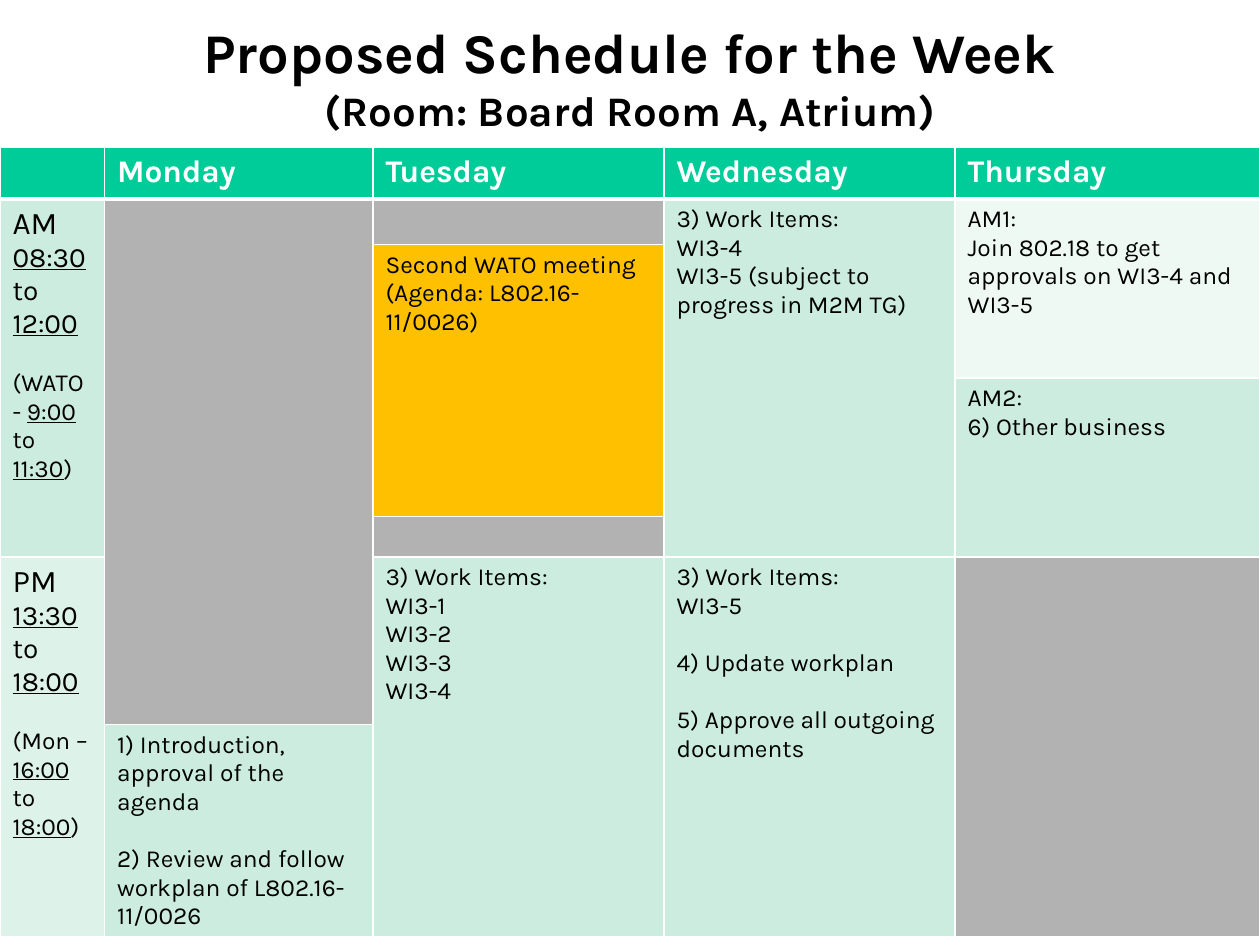
"""Build the weekly schedule slide."""
from dataclasses import dataclass

import pptx
import pptx.dml.color
import pptx.enum.text
import pptx.oxml
import pptx.oxml.ns
import pptx.util
from pptx.util import Inches

FACE = "Karla"
BLACK, WHITE = "000000", "FFFFFF"
GREEN, MINT, PALE, LIGHT = "00CC99", "CBECDE", "DDF3EA", "EEF9F4"
GREY, GOLD = "B2B2B2", "FFC000"
COLS = (0.83, 2.13, 2.31, 2.31, 2.42)
ROWS = (0.41, 0.36, 1.06, 1.1, 0.32, 1.33, 1.68)


@dataclass(frozen=True)
class Para:
    """A paragraph, with underlined parts between underscores."""
    text: str
    size: int = 14
    gap: float = 0
    color: str = BLACK
    bold: bool = False


@dataclass(frozen=True)
class Block:
    """A table cell that may span several rows."""
    row: int
    col: int
    fill: str
    paras: tuple[Para, ...] = ()
    span: int = 1


def lines(*texts: str) -> tuple[Para, ...]:
    """Make plain paragraphs."""
    return tuple(Para(text) for text in texts)


def times(half: str, hours: str, note: str) -> tuple[Para, ...]:
    """Make the text of a time cell."""
    return Para(half, 18), Para(hours, 16), Para(note, gap=16.4)


def heads() -> list[Block]:
    """Make the header row."""
    days = ("", "Monday", "Tuesday", "Wednesday", "Thursday")
    return [Block(0, col, GREEN, (Para(day, 18, color=WHITE, bold=True),) if day else ())
            for col, day in enumerate(days)]


BLOCKS = heads() + [
    Block(1, 0, MINT, times("AM", "_08:30_ to _12:00_", "(WATO - _9:00_ to _11:30_)"), 4),
    Block(5, 0, PALE, times("PM", "_13:30_ to _18:00_", "(Mon – _16:00_ to _18:00_)"), 2),
    Block(1, 1, GREY, span=5),
    Block(6, 1, MINT, (Para("1) Introduction, approval of the agenda"),
                       Para("2) Review and follow workplan of L802.16-11/0026", gap=16.4))),
    Block(1, 2, GREY),
    Block(2, 2, GOLD, lines("Second WATO meeting", "(Agenda: L802.16-11/0026)"), 2),
    Block(4, 2, GREY),
    Block(5, 2, MINT, lines("3) Work Items:", "WI3-1", "WI3-2", "WI3-3", "WI3-4"), 2),
    Block(1, 3, MINT, lines("3) Work Items:", "WI3-4",
                            "WI3-5 (subject to progress in M2M TG)"), 4),
    Block(5, 3, MINT, lines("3) Work Items:", "WI3-5") + (
        Para("4) Update workplan", gap=16.4),
        Para("5) Approve all outgoing documents", gap=16.4)), 2),
    Block(1, 4, LIGHT, lines("AM1:", "Join 802.18 to get approvals on WI3-4 and WI3-5"), 2),
    Block(3, 4, MINT, lines("AM2:", "6) Other business"), 2),
    Block(5, 4, GREY, span=2),
]


def rgb(code: str) -> pptx.dml.color.RGBColor:
    """Turn a hex string into a colour."""
    return pptx.dml.color.RGBColor.from_string(code)


def style(font, color: str, bold: bool) -> None:
    """Set face, colour and weight."""
    font.name, font.bold = FACE, bold
    font.color.rgb = rgb(color)


def edge(cell, row: int) -> None:
    """Draw white borders, thick below the header."""
    props = cell._tc.get_or_add_tcPr()
    space = pptx.oxml.ns.nsdecls("a")
    for side in "LRTB":
        thick = (row, side) in ((0, "B"), (1, "T"))
        width = pptx.util.Pt(3 if thick else 1)
        props.append(pptx.oxml.parse_xml(
            f'<a:ln{side} {space} w="{width}"><a:solidFill>'
            f'<a:srgbClr val="{WHITE}"/></a:solidFill></a:ln{side}>'))


def write(frame, paras: tuple[Para, ...]) -> None:
    """Write paragraphs into a text frame."""
    for num, para in enumerate(paras):
        item = frame.add_paragraph() if num else frame.paragraphs[0]
        style(item.font, para.color, para.bold)
        item.font.size = pptx.util.Pt(para.size)
        if para.gap:
            item.space_before = pptx.util.Pt(para.gap)
        for part, text in enumerate(para.text.split("_")):
            if text:
                run = item.add_run()
                run.text = text
                if part % 2:
                    run.font.underline = True


def draw(table, block: Block) -> None:
    """Fill one block of the table."""
    cell = table.cell(block.row, block.col)
    if block.span > 1:
        cell.merge(table.cell(block.row + block.span - 1, block.col))
    cell.fill.solid()
    cell.fill.fore_color.rgb = rgb(block.fill)
    if block.paras:
        cell.margin_top = cell.margin_bottom = Inches(0.05)
        write(cell.text_frame, block.paras)


def title(slide) -> None:
    """Place and write the title."""
    shape = slide.shapes.title
    shape.left, shape.top = Inches(0.5), Inches(0.05)
    shape.width, shape.height = Inches(9), Inches(0.95)
    frame = shape.text_frame
    frame.auto_size = pptx.enum.text.MSO_AUTO_SIZE.NONE
    frame.vertical_anchor = pptx.enum.text.MSO_ANCHOR.TOP
    frame.margin_top = Inches(0.09)
    para = frame.paragraphs[0]
    para.alignment = pptx.enum.text.PP_ALIGN.CENTER
    style(para.font, BLACK, True)
    for text, size in (("Proposed Schedule for the Week", 32),
                       ("(Room: Board Room A, Atrium)", 24)):
        if para.runs:
            para.add_line_break()
        run = para.add_run()
        run.text = text
        run.font.size = pptx.util.Pt(size)


def grid(slide) -> None:
    """Add the schedule table."""
    table = slide.shapes.add_table(
        len(ROWS), len(COLS), Inches(0), Inches(1.17),
        Inches(sum(COLS)), Inches(sum(ROWS))).table
    table.first_row = table.horz_banding = False
    for col, width in zip(table.columns, COLS):
        col.width = Inches(width)
    for num, (row, height) in enumerate(zip(table.rows, ROWS)):
        row.height = Inches(height)
        for cell in row.cells:
            cell.margin_top = cell.margin_bottom = 0
            edge(cell, num)
    for block in BLOCKS:
        draw(table, block)


def main() -> None:
    """Build and save the deck."""
    deck = pptx.Presentation()
    deck.slide_width, deck.slide_height = Inches(10), Inches(7.5)
    slide = deck.slides.add_slide(deck.slide_layouts[5])
    title(slide)
    grid(slide)
    deck.save("out.pptx")


if __name__ == "__main__":
    main()
